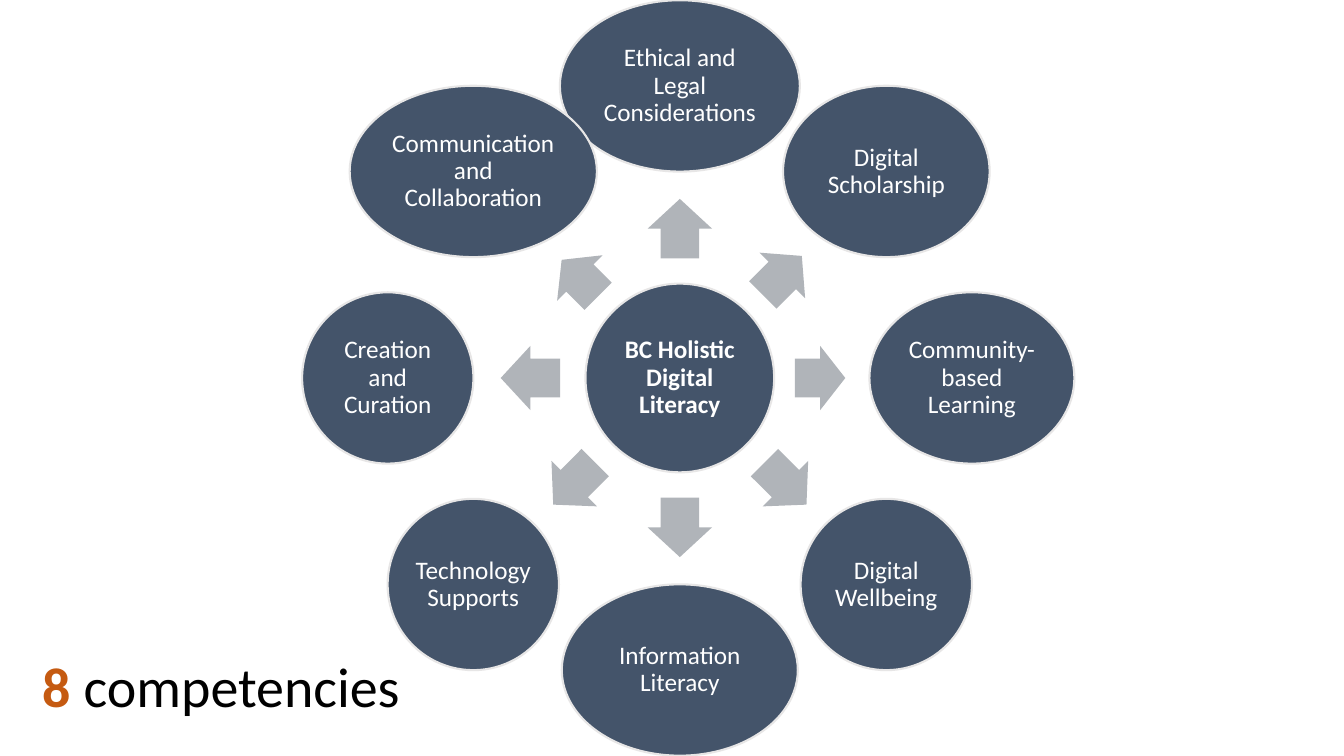
"""Build a slide with eight competencies arranged around BC Holistic Digital Literacy."""
from dataclasses import dataclass
from math import cos, radians, sin

from pptx import Presentation
from pptx.dml.color import RGBColor
from pptx.enum.shapes import MSO_SHAPE as Preset
from pptx.enum.text import MSO_ANCHOR as Anchor, MSO_AUTO_SIZE as AutoSize, PP_ALIGN as Align
from pptx.shapes.autoshape import Shape
from pptx.slide import Slide
from pptx.text.text import TextFrame
from pptx.util import Pt

NAVY = RGBColor(0x44, 0x54, 0x6A)
PALE = RGBColor(0xE7, 0xE6, 0xE6)
GREY = RGBColor(0xB0, 0xB4, 0xB9)
WHITE = RGBColor(0xFF, 0xFF, 0xFF)
BLACK = RGBColor(0x00, 0x00, 0x00)
ORANGE = RGBColor(0xC5, 0x5A, 0x11)

CENTER_X, CENTER_Y = 485.6, 270
RING_RADIUS = 208.6
HUB_SIZE = 134.8
BUBBLE_HEIGHT = 122.4
ARROW_HEIGHT = 46
ARROW_OFFSET = 64.2


@dataclass
class Competency:
    label: str
    width: float = BUBBLE_HEIGHT
    arrow_length: float = 42.5


COMPETENCIES = [
    Competency("Ethical and Legal Considerations", width=171.4),
    Competency("Digital Scholarship", width=147.6, arrow_length=39.4),
    Competency("Community-based Learning", width=146.4, arrow_length=36),
    Competency("Digital Wellbeing"),
    Competency("Information Literacy", width=168.6),
    Competency("Technology Supports"),
    Competency("Creation and Curation"),
    Competency("Communication and Collaboration", width=176.6, arrow_length=36.8),
]


def write(frame: TextFrame, text: str, *, size: float, color: RGBColor,
          bold: bool = False, spacing: float = 1.0) -> None:
    """Append a formatted run to the first paragraph."""
    paragraph = frame.paragraphs[0]
    paragraph.alignment = Align.CENTER
    paragraph.line_spacing = spacing
    run = paragraph.add_run()
    run.text = text
    run.font.name = "Calibri"
    run.font.size = Pt(size)
    run.font.bold = bold
    run.font.color.rgb = color


def add_centered(slide: Slide, preset: Preset, angle: float, distance: float,
                 width: float, height: float, fill: RGBColor) -> Shape:
    """Place a filled shape at a polar position around the hub."""
    x = CENTER_X + distance * cos(radians(angle))
    y = CENTER_Y + distance * sin(radians(angle))
    shape = slide.shapes.add_shape(
        preset, Pt(x - width / 2), Pt(y - height / 2), Pt(width), Pt(height))
    shape.shadow.inherit = False
    shape.fill.solid()
    shape.fill.fore_color.rgb = fill
    shape.line.fill.background()
    return shape


def add_bubble(slide: Slide, label: str, angle: float, distance: float,
               width: float, height: float, bold: bool = False) -> None:
    """Draw an outlined ellipse with its label."""
    bubble = add_centered(slide, Preset.OVAL, angle, distance, width, height, NAVY)
    bubble.line.color.rgb = PALE
    bubble.line.width = Pt(1.5)
    frame = bubble.text_frame
    frame.word_wrap = True
    frame.vertical_anchor = Anchor.MIDDLE
    frame.margin_left = frame.margin_right = Pt(1.8)
    frame.margin_top = frame.margin_bottom = Pt(1.8)
    write(frame, label, size=18, color=WHITE, bold=bold, spacing=0.9)


def add_arrow(slide: Slide, angle: float, length: float) -> None:
    """Draw an arrow pointing outward from the hub."""
    arrow = add_centered(slide, Preset.RIGHT_ARROW, angle, ARROW_OFFSET + length,
                         length, ARROW_HEIGHT, GREY)
    arrow.adjustments[0] = 0.6
    arrow.adjustments[1] = 0.5
    arrow.rotation = angle


def add_heading(slide: Slide) -> None:
    """Write the competency count at the lower left."""
    heading = slide.shapes.add_textbox(Pt(-16.6), Pt(461.5), Pt(349.2), Pt(55.4))
    frame = heading.text_frame
    frame.word_wrap = True
    frame.auto_size = AutoSize.SHAPE_TO_FIT_TEXT
    write(frame, "8", size=40, color=ORANGE, bold=True)
    write(frame, " competencies", size=40, color=BLACK)


def main() -> None:
    """Assemble and save the presentation."""
    deck = Presentation()
    deck.slide_width, deck.slide_height = Pt(960), Pt(540)
    slide = deck.slides.add_slide(deck.slide_layouts[6])
    add_bubble(slide, "BC Holistic Digital Literacy", 0, 0, HUB_SIZE, HUB_SIZE, bold=True)
    step = 360 / len(COMPETENCIES)
    for index, competency in enumerate(COMPETENCIES):
        angle = (270 + index * step) % 360
        add_arrow(slide, angle, competency.arrow_length)
        add_bubble(slide, competency.label, angle, RING_RADIUS,
                   competency.width, BUBBLE_HEIGHT)
    add_heading(slide)
    deck.save("out.pptx")


if __name__ == "__main__":
    main()
